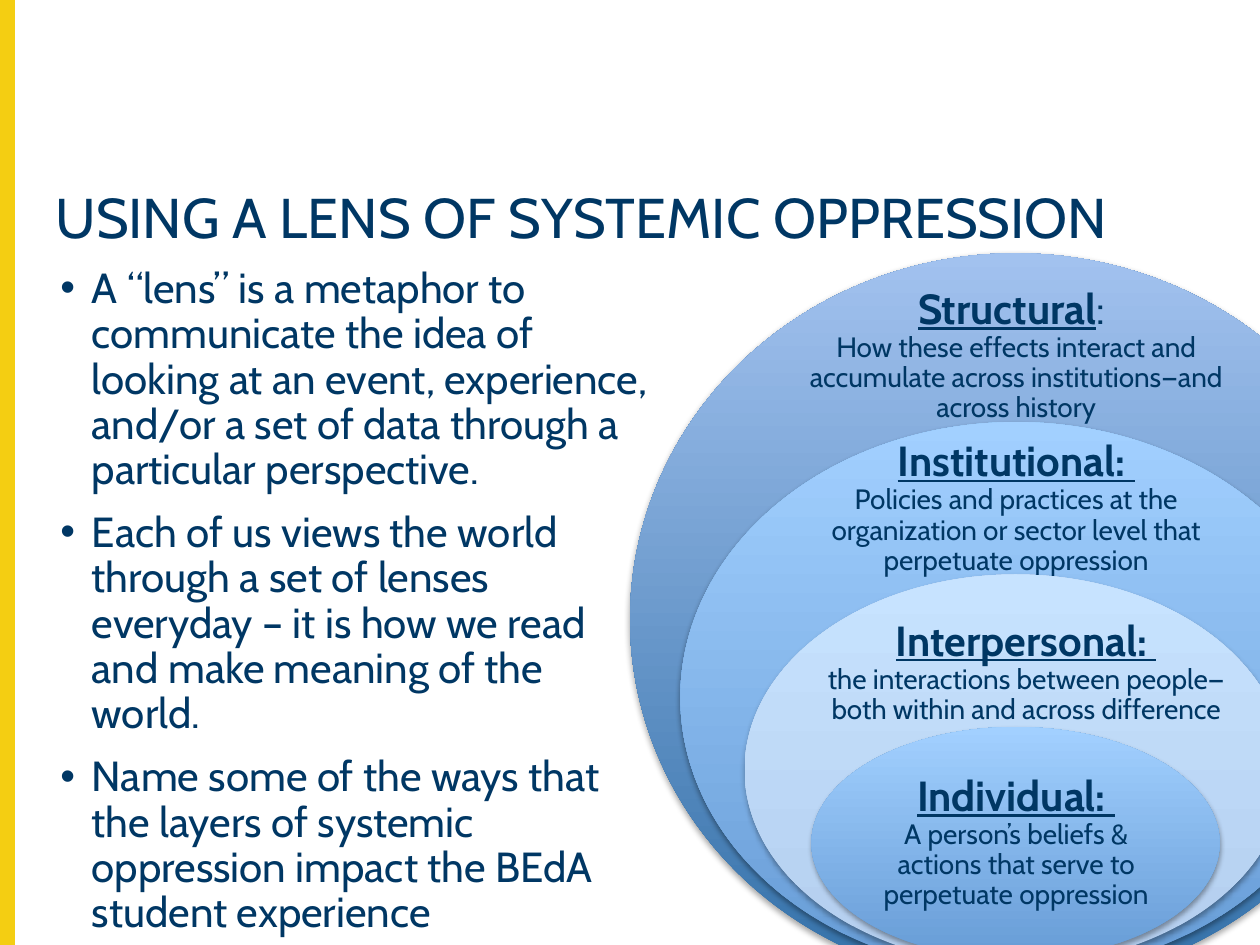
from dataclasses import dataclass

from lxml.etree import SubElement
from pptx import Presentation
from pptx.dml.color import RGBColor
from pptx.enum.shapes import MSO_SHAPE
from pptx.enum.text import MSO_ANCHOR, MSO_AUTO_SIZE, PP_ALIGN
from pptx.oxml.ns import qn
from pptx.util import Inches, Pt


@dataclass(frozen=True)
class Theme:
    font: str = "Cabin"
    text: str = "003764"
    accent: str = "F4CE12"
    outer: tuple = ("3370A8", "A2C2EF")
    middle: tuple = ("679CD6", "A2D0FF")
    pale: tuple = ("B4CEEE", "C7E3FF")
    title_size: int = 32
    body_size: int = 24
    detail_size: int = 16
    line_spacing: float = 0.9


class SlideBuilder:
    def __init__(self, slide, theme):
        self.slide = slide
        self.theme = theme

    def format_font(self, font, size, bold=False, underline=False):
        font.name = self.theme.font
        font.size = Pt(size)
        font.bold = bold
        font.underline = underline
        font.color.rgb = RGBColor.from_string(self.theme.text)

    def format_frame(self, text_frame, anchor, inset_x, inset_y):
        text_frame.word_wrap = True
        text_frame.auto_size = MSO_AUTO_SIZE.NONE
        text_frame.vertical_anchor = anchor
        text_frame.margin_left = text_frame.margin_right = Inches(inset_x)
        text_frame.margin_top = text_frame.margin_bottom = Inches(inset_y)

    def add_side_bar(self, width, height):
        bar = self.slide.shapes.add_shape(MSO_SHAPE.RECTANGLE, 0, 0, Inches(width), Inches(height))
        bar.shadow.inherit = False
        color = RGBColor.from_string(self.theme.accent)
        bar.fill.solid()
        bar.fill.fore_color.rgb = color
        bar.line.color.rgb = color
        bar.line.width = Pt(1)

    def set_title(self, text, left, top, width, height):
        title = self.slide.shapes.title
        title.left, title.top = Inches(left), Inches(top)
        title.width, title.height = Inches(width), Inches(height)
        self.format_frame(title.text_frame, MSO_ANCHOR.TOP, 0.1, 0.1)
        title.text_frame.text = text
        paragraph = title.text_frame.paragraphs[0]
        paragraph.alignment = PP_ALIGN.LEFT
        paragraph.line_spacing = self.theme.line_spacing
        self.format_font(paragraph.runs[0].font, self.theme.title_size)

    def add_text_box(self, left, top, width, height):
        box = self.slide.shapes.add_textbox(Inches(left), Inches(top), Inches(width), Inches(height))
        return box.text_frame

    def add_bullets(self, items, left, top, width, height):
        text_frame = self.add_text_box(left, top, width, height)
        self.format_frame(text_frame, MSO_ANCHOR.TOP, 0.1, 0.05)
        text_frame.text = "\n".join(items)
        for index, paragraph in enumerate(text_frame.paragraphs):
            paragraph.line_spacing = self.theme.line_spacing
            paragraph.space_before = Pt(10 if index else 0)
            properties = paragraph._p.get_or_add_pPr()
            properties.set("marL", str(Inches(0.25)))
            properties.set("indent", str(Inches(-0.25)))
            SubElement(properties, qn("a:buFont"), typeface="Arial")
            SubElement(properties, qn("a:buChar"), char="•")
            self.format_font(paragraph.runs[0].font, self.theme.body_size)

    def add_ellipse(self, colors, left, top, width, height):
        """Add an ellipse shaded from bottom to top, with a soft shadow below."""
        ellipse = self.slide.shapes.add_shape(
            MSO_SHAPE.OVAL, Inches(left), Inches(top), Inches(width), Inches(height))
        ellipse.line.fill.background()
        ellipse.fill.gradient()
        ellipse.fill.gradient_angle = 90
        for stop, color in zip(ellipse.fill.gradient_stops, colors):
            stop.color.rgb = RGBColor.from_string(color)
        ellipse.shadow.inherit = False
        effects = ellipse._element.spPr.find(qn("a:effectLst"))
        shadow = SubElement(effects, qn("a:outerShdw"), blurRad=str(Pt(3.1)), dist=str(Pt(1.8)),
                            dir="5400000", rotWithShape="0")
        color = SubElement(shadow, qn("a:srgbClr"), val="000000")
        SubElement(color, qn("a:alpha"), val="35000")

    def add_label(self, heading, suffix, detail, left, top, width, height):
        """Add a centred label; the suffix follows the heading in plain type."""
        text_frame = self.add_text_box(left, top, width, height)
        self.format_frame(text_frame, MSO_ANCHOR.MIDDLE, 0.09, 0.09)
        paragraph = text_frame.paragraphs[0]
        paragraph.alignment = PP_ALIGN.CENTER
        paragraph.line_spacing = self.theme.line_spacing
        paragraph.space_after = Pt(6)
        self.add_run(paragraph, heading, self.theme.body_size, True)
        if suffix:
            self.add_run(paragraph, suffix, self.theme.body_size)
        paragraph.add_line_break()
        self.add_run(paragraph, detail, self.theme.detail_size)

    def add_run(self, paragraph, text, size, emphasis=False):
        run = paragraph.add_run()
        run.text = text
        self.format_font(run.font, size, bold=emphasis, underline=emphasis)


BULLETS = [
    "A “lens” is a metaphor to communicate the idea of looking at an event, experience, "
    "and/or a set of data through a particular perspective.",
    "Each of us views the world through a set of lenses everyday – it is how we read "
    "and make meaning of the world.",
    "Name some of the ways that the layers of systemic oppression impact the BEdA "
    "student experience",
]


def main():
    theme = Theme()
    presentation = Presentation()
    presentation.slide_width, presentation.slide_height = Inches(10), Inches(7.5)
    slide = presentation.slides.add_slide(presentation.slide_layouts[5])
    builder = SlideBuilder(slide, theme)

    builder.add_side_bar(0.11, 7.5)
    builder.set_title("USING A LENS OF SYSTEMIC OPPRESSION", 0.34, 1.41, 9.12, 0.81)
    builder.add_bullets(BULLETS, 0.38, 2.07, 4.92, 3.62)

    # Colours, ellipse position, label text, label position; outermost first
    layers = [
        (theme.outer, (5, 2.01, 6.12, 5.81),
         ("Structural", ": ",
          "How these effects interact and accumulate across institutions—and across history"),
         (6.27, 2.39, 3.59, 0.87)),
        (theme.middle, (5.4, 3.35, 5.33, 4.37),
         ("Institutional: ", "",
          "Policies and practices at the organization or sector level that perpetuate oppression"),
         (6.27, 3.64, 3.59, 0.79)),
        (theme.pale, (5.91, 4.56, 4.3, 3.1),
         ("Interpersonal: ", "",
          "the interactions between people—both within and across difference"),
         (6.44, 4.99, 3.41, 0.7)),
        (theme.middle, (6.44, 5.77, 3.24, 1.84),
         ("Individual: ", "",
          "A person’s beliefs & actions that serve to perpetuate oppression"),
         (6.92, 6.23, 2.29, 0.92)),
    ]
    for colors, ellipse_box, label, label_box in layers:
        builder.add_ellipse(colors, *ellipse_box)
        builder.add_label(*label, *label_box)

    presentation.save("out.pptx")


if __name__ == "__main__":
    main()
